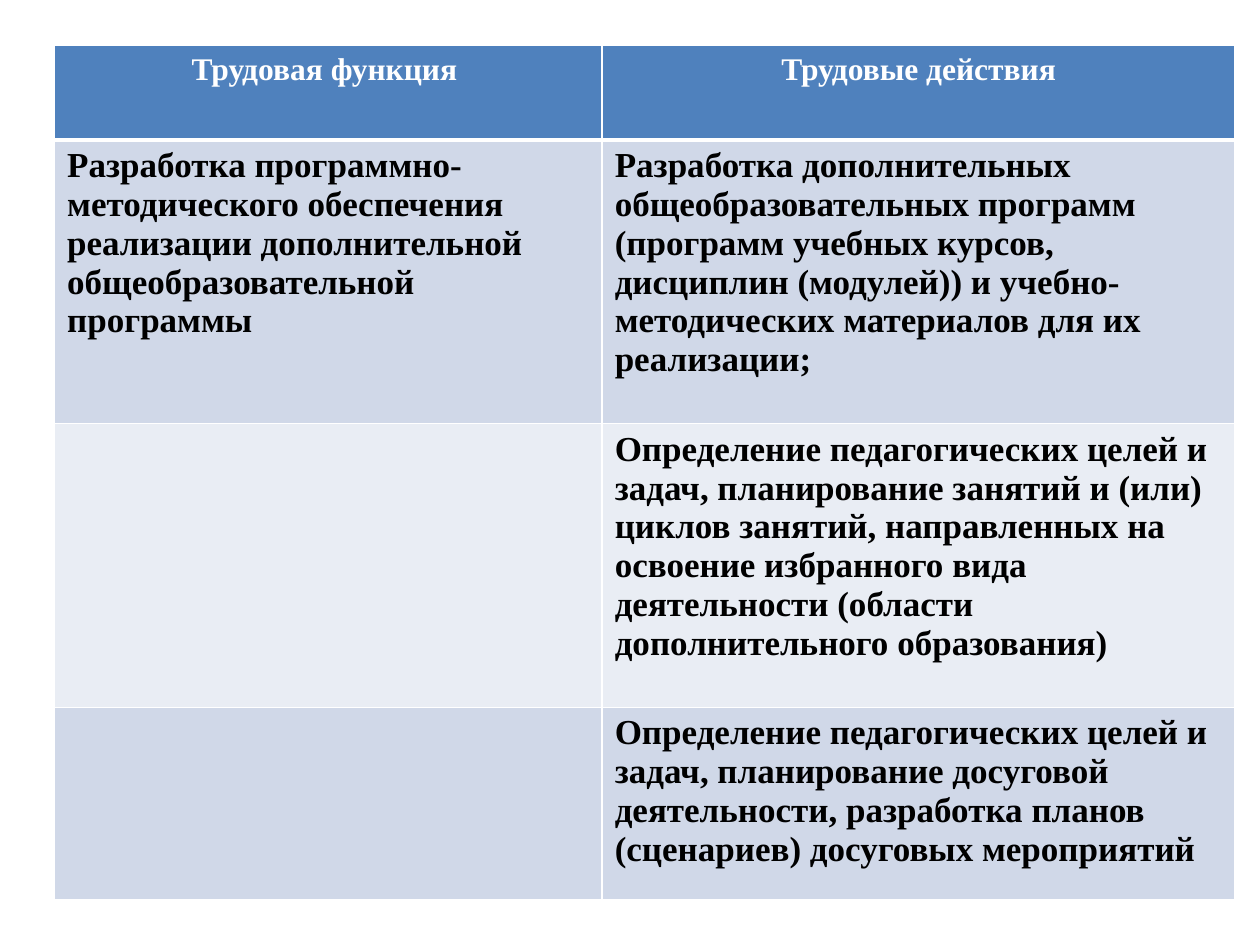
from lxml.etree import SubElement
from pptx import Presentation
from pptx.dml.color import RGBColor
from pptx.enum.text import PP_ALIGN
from pptx.oxml.ns import qn
from pptx.util import Cm, Pt

COLORS = {
    "header": "4F81BD",
    "odd_row": "D0D8E8",
    "even_row": "E9EDF4",
    "header_text": "FFFFFF",
    "body_text": "000000",
    "border": "FFFFFF",
}

COLUMN_WIDTHS = [11.04, 12.76]
ROW_HEIGHTS = [1.9, 5.72, 5.72, 3.88]

FUNCTIONS_AND_ACTIONS = [
    ("Трудовая функция ", "Трудовые действия"),
    ("Разработка программно-методического обеспечения реализации "
     "дополнительной общеобразовательной программы",
     "Разработка дополнительных общеобразовательных программ (программ учебных "
     "курсов, дисциплин (модулей)) и учебно-методических материалов для их реализации;"),
    ("",
     "Определение педагогических целей и задач, планирование занятий и (или) "
     "циклов занятий, направленных на освоение избранного вида деятельности "
     "(области дополнительного образования)"),
    ("",
     "Определение педагогических целей и задач, планирование досуговой "
     "деятельности, разработка планов (сценариев) досуговых мероприятий"),
]

HEADER_FONT = {"name": "Times New Roman", "size": Pt(18), "bold": True}
BODY_FONT = {**HEADER_FONT, "size": Pt(20)}


def rgb(color):
    return RGBColor.from_string(COLORS[color])


def set_borders(cell, top, bottom):
    """Draw the four cell borders; must precede the fill in the XML."""
    properties = cell._tc.get_or_add_tcPr()
    for side, width in {"L": 1, "R": 1, "T": top, "B": bottom}.items():
        border = SubElement(properties, qn(f"a:ln{side}"), w=str(Pt(width)))
        fill = SubElement(border, qn("a:solidFill"))
        SubElement(fill, qn("a:srgbClr"), val=COLORS["border"])


def write_cell(cell, text, font_format, text_color, alignment):
    if not text:
        return
    paragraph = cell.text_frame.paragraphs[0]
    paragraph.alignment = alignment
    run = paragraph.add_run()
    run.text = text
    for attribute, value in font_format.items():
        setattr(run.font, attribute, value)
    run.font.color.rgb = rgb(text_color)


def add_functions_table(slide, left, top):
    """Place the table of job functions and actions at the given corner."""
    functions = slide.shapes.add_table(
        len(ROW_HEIGHTS), len(COLUMN_WIDTHS), Cm(left), Cm(top),
        Cm(sum(COLUMN_WIDTHS)), Cm(sum(ROW_HEIGHTS))).table

    # Grid
    for column, width in zip(functions.columns, COLUMN_WIDTHS):
        column.width = Cm(width)
    for row, height in zip(functions.rows, ROW_HEIGHTS):
        row.height = Cm(height)

    # Header row, then banded body rows
    for index, texts in enumerate(FUNCTIONS_AND_ACTIONS):
        if index == 0:
            band = "header"
            style = (HEADER_FONT, "header_text", PP_ALIGN.CENTER)
        else:
            band = "odd_row" if index % 2 else "even_row"
            style = (BODY_FONT, "body_text", PP_ALIGN.LEFT)
        for cell, text in zip(functions.rows[index].cells, texts):
            set_borders(cell, top=3 if index == 1 else 1,
                        bottom=3 if index == 0 else 1)
            cell.fill.solid()
            cell.fill.fore_color.rgb = rgb(band)
            write_cell(cell, text, *style)


def main():
    presentation = Presentation()
    presentation.slide_width, presentation.slide_height = Cm(25.4), Cm(19.05)
    slide = presentation.slides.add_slide(presentation.slide_layouts[6])
    add_functions_table(slide, left=1.1, top=0.92)
    presentation.save("out.pptx")


if __name__ == "__main__":
    main()
